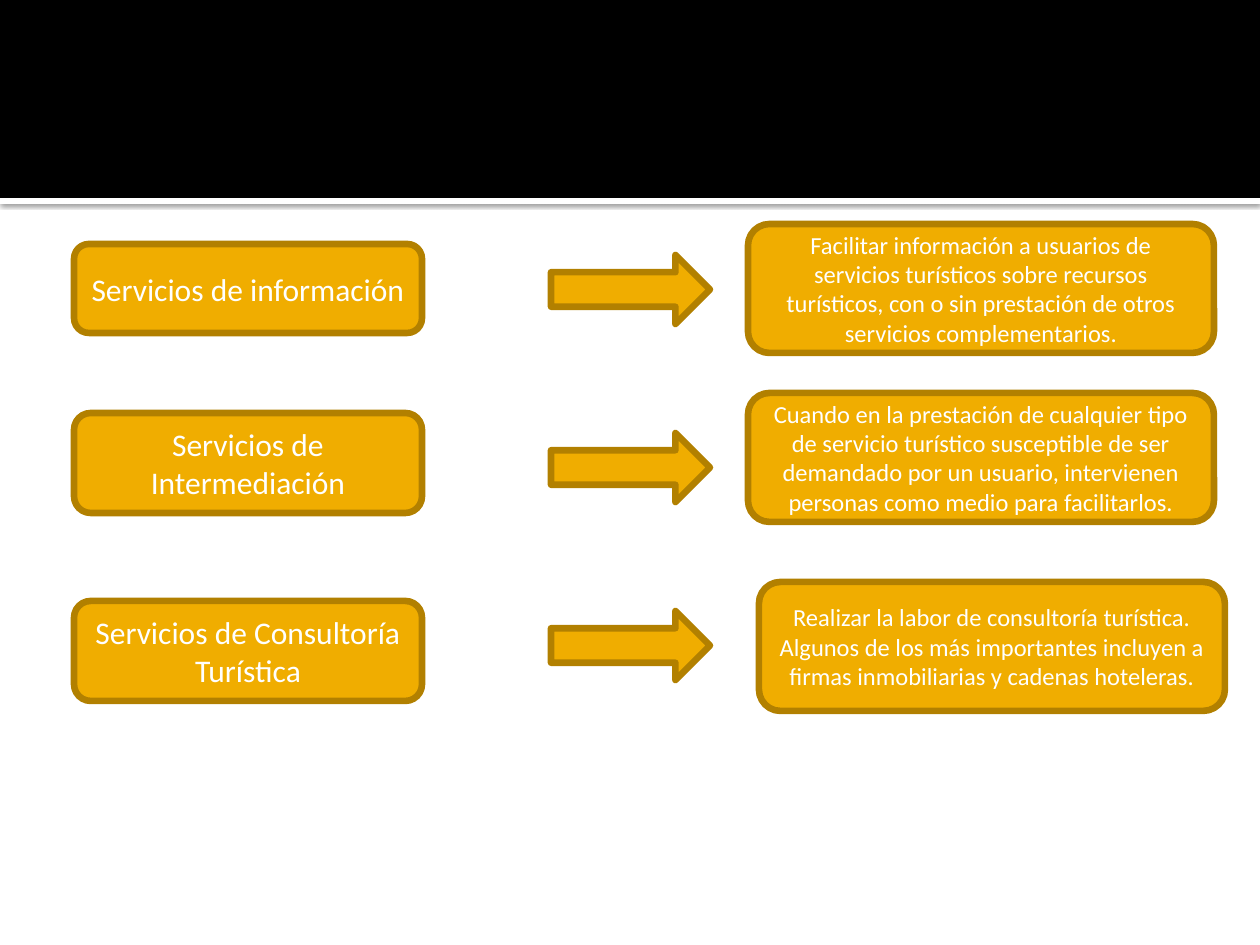
from typing import NamedTuple

from lxml.etree import SubElement
from pptx import Presentation
from pptx.dml.color import RGBColor
from pptx.enum.shapes import MSO_SHAPE
from pptx.enum.text import MSO_ANCHOR, PP_ALIGN
from pptx.oxml.ns import qn
from pptx.shapes.autoshape import Shape
from pptx.shapes.shapetree import SlideShapes
from pptx.util import Emu, Pt

EMU_PER_PX = 914400 / 126
SLIDE_WIDTH, SLIDE_HEIGHT = 1260, 945
BAND_HEIGHT, STRIP_HEIGHT = 198, 6
LABEL_LEFT, LABEL_WIDTH, LABEL_SIZE = 74, 348, 18
ARROW_LEFT, ARROW_WIDTH, ARROW_HEIGHT = 551, 159, 69
FIRST_ARROW_TOP, ARROW_STEP = 255, 178
DETAIL_WIDTH, DETAIL_HEIGHT, DETAIL_SIZE = 466, 129, 14
FONT = "Calibri"
COLORS = {"black": "000000", "white": "FFFFFF", "amber": "F0AD00", "brown": "B28000"}


class Box(NamedTuple):
    left: int
    top: int
    width: int
    height: int


class Service(NamedTuple):
    label: str
    label_top: int
    label_height: int
    detail: str
    detail_left: int
    detail_top: int


SERVICES = [
    Service(
        "Servicios de información", 244, 89,
        "Facilitar información a usuarios de servicios turísticos sobre recursos "
        "turísticos, con o sin prestación de otros servicios complementarios.",
        748, 224,
    ),
    Service(
        "Servicios de Intermediación", 413, 100,
        "Cuando en la prestación de cualquier tipo de servicio turístico susceptible "
        "de ser demandado por un usuario, intervienen personas como medio para "
        "facilitarlos.",
        748, 393,
    ),
    Service(
        "Servicios de Consultoría Turística", 601, 100,
        "Realizar la labor de consultoría turística. Algunos de los más importantes "
        "incluyen a firmas inmobiliarias y cadenas hoteleras.",
        759, 582,
    ),
]


def px(length: int) -> Emu:
    return Emu(round(length * EMU_PER_PX))


def rgb(name: str) -> RGBColor:
    return RGBColor.from_string(COLORS[name])


def add_filled(shapes: SlideShapes, kind: MSO_SHAPE, box: Box, color: str) -> Shape:
    shape = shapes.add_shape(kind, *map(px, box))
    shape.shadow.inherit = False
    shape.fill.solid()
    shape.fill.fore_color.rgb = rgb(color)
    shape.line.fill.background()
    return shape


def add_outlined(shapes: SlideShapes, kind: MSO_SHAPE, box: Box) -> Shape:
    shape = add_filled(shapes, kind, box, "amber")
    shape.line.color.rgb = rgb("brown")
    shape.line.width = Pt(3.78)
    return shape


def add_card(shapes: SlideShapes, box: Box, text: str, size: int) -> None:
    card = add_outlined(shapes, MSO_SHAPE.FLOWCHART_ALTERNATE_PROCESS, box)
    frame = card.text_frame
    frame.word_wrap = True
    frame.vertical_anchor = MSO_ANCHOR.MIDDLE
    paragraph = frame.paragraphs[0]
    paragraph.alignment = PP_ALIGN.CENTER
    run = paragraph.add_run()
    run.text = text
    run.font.name = FONT
    run.font.size = Pt(size)
    run.font.color.rgb = rgb("white")


def add_soft_shadow(shape: Shape) -> None:
    """Cast a blurred black shadow straight down."""
    effects = shape._element.spPr.find(qn("a:effectLst"))
    shadow = SubElement(
        effects, qn("a:outerShdw"), blurRad=str(Pt(2.5)), dist=str(Pt(0.8)),
        dir="5400000", algn="t", rotWithShape="0",
    )
    color = SubElement(shadow, qn("a:srgbClr"), val=COLORS["black"])
    SubElement(color, qn("a:alpha"), val="60000")


def add_header(shapes: SlideShapes) -> None:
    strip_box = Box(0, BAND_HEIGHT, SLIDE_WIDTH, STRIP_HEIGHT)
    add_soft_shadow(add_filled(shapes, MSO_SHAPE.RECTANGLE, strip_box, "white"))
    band_box = Box(0, 0, SLIDE_WIDTH, BAND_HEIGHT)
    add_filled(shapes, MSO_SHAPE.RECTANGLE, band_box, "black")


def add_service(shapes: SlideShapes, service: Service, arrow_top: int) -> None:
    label_box = Box(LABEL_LEFT, service.label_top, LABEL_WIDTH, service.label_height)
    add_card(shapes, label_box, service.label, LABEL_SIZE)
    arrow_box = Box(ARROW_LEFT, arrow_top, ARROW_WIDTH, ARROW_HEIGHT)
    add_outlined(shapes, MSO_SHAPE.RIGHT_ARROW, arrow_box)
    detail_box = Box(
        service.detail_left, service.detail_top, DETAIL_WIDTH, DETAIL_HEIGHT
    )
    add_card(shapes, detail_box, service.detail, DETAIL_SIZE)


def main() -> None:
    presentation = Presentation()
    presentation.slide_width = px(SLIDE_WIDTH)
    presentation.slide_height = px(SLIDE_HEIGHT)
    slide = presentation.slides.add_slide(presentation.slide_layouts[6])
    slide.background.fill.solid()
    slide.background.fill.fore_color.rgb = rgb("white")
    add_header(slide.shapes)
    for row, service in enumerate(SERVICES):
        add_service(slide.shapes, service, FIRST_ARROW_TOP + row * ARROW_STEP)
    presentation.save("out.pptx")


if __name__ == "__main__":
    main()
